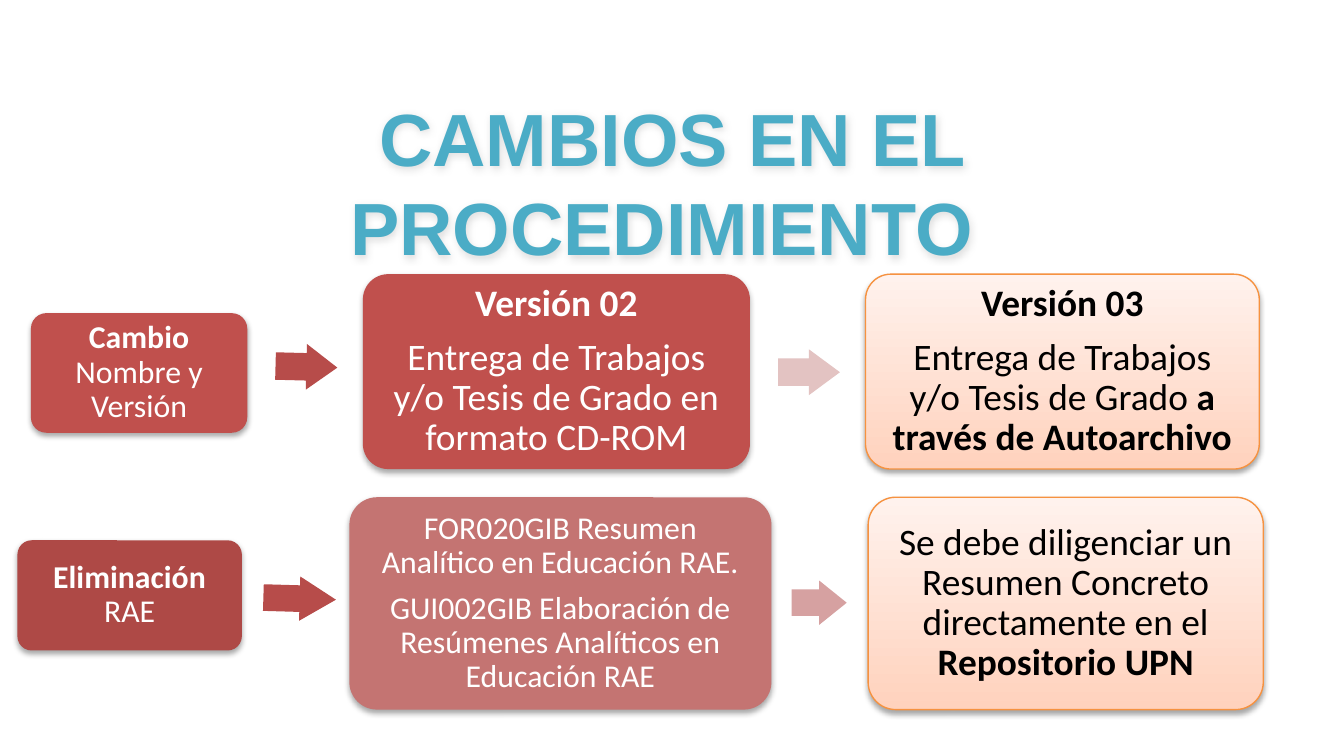
import pptx
import pptx.util
import pptx.dml.color
import pptx.enum.dml
import pptx.enum.shapes
import pptx.enum.text
import pptx.oxml
import pptx.oxml.ns

Inches = pptx.util.Inches
WHITE, BLACK, RED, PEACH = "FFFFFF", "000000", "C0504D", "FFD2BD"

VERSION_ROW = {
    "box": (0.23, 2.04, 9.14, 1.45),
    "cards": [
        ((0, 0.29, 1.61, 0.89), RED, 17,
         [[("Cambio", True), (" Nombre y Versión", False)]]),
        ((2.47, 0, 2.88, 1.45), RED, 20,
         [[("Versión 02", True)],
          [("Entrega de Trabajos y/o Tesis de Grado en formato CD-ROM", False)]]),
        ((6.21, 0, 2.93, 1.45), PEACH, 20,
         [[("Versión 03", True)],
          [("Entrega de Trabajos y/o Tesis de Grado ", False),
           ("a través de Autoarchivo", True)]]),
    ],
    "arrows": [((1.82, 0.52, 0.46, 0.34), "B74C4A", 1.5),
               ((5.56, 0.56, 0.46, 0.34), "E3C3C2", 0)],
}
REMOVAL_ROW = {
    "box": (0.13, 3.7, 9.28, 1.58),
    "cards": [
        ((0, 0.32, 1.67, 0.82), "AE4946", 17,
         [[("Eliminación", True), (" RAE", False)]]),
        ((2.47, 0, 3.14, 1.58), "C47472", 17,
         [[("FOR020GIB Resumen Analítico en Educación RAE.", False)],
          [("GUI002GIB Elaboración de Resúmenes Analíticos en Educación RAE", False)]]),
        ((6.33, 0, 2.94, 1.58), PEACH, 20,
         [[("Se debe diligenciar un Resumen Concreto directamente en el ", False),
           ("Repositorio UPN", True)]]),
    ],
    "arrows": [((1.83, 0.59, 0.54, 0.33), "B74C4A", 1.7),
               ((5.76, 0.62, 0.41, 0.33), "D6A1A1", 0)],
}


def color(value):
    """Return the RGB colour for a hex string."""
    return pptx.dml.color.RGBColor.from_string(value)


def add_shadow(shape, opacity, blur, distance):
    """Give the shape a soft black shadow falling straight down."""
    shape.shadow.inherit = False
    effects = shape.element.spPr.find(pptx.oxml.ns.qn("a:effectLst"))
    effects.append(pptx.oxml.parse_xml(
        f'<a:outerShdw {pptx.oxml.ns.nsdecls("a")} blurRad="{pptx.util.Pt(blur)}" '
        f'dist="{pptx.util.Pt(distance)}" dir="5400000" rotWithShape="0">'
        f'<a:srgbClr val="000000"><a:alpha val="{opacity * 1000}"/></a:srgbClr>'
        '</a:outerShdw>'))


def style_run(run, size, face, ink, bold):
    """Set the font of one run."""
    run.font.size = pptx.util.Pt(size)
    run.font.name = face
    run.font.color.rgb = color(ink)
    run.font.bold = bold


def fill_peach(card):
    """Fill the card with the peach gradient and outline it in orange."""
    card.fill.gradient()
    card.fill.gradient_angle = 90
    for stop, (place, shade) in zip(card.fill.gradient_stops, ((0, PEACH), (1, "FFF2ED"))):
        stop.position = place
        stop.color.rgb = color(shade)
    card.line.color.rgb = color("F69240")
    card.line.width = pptx.util.Pt(0.75)


def add_card(slide, box, fill, size, paragraphs):
    """Draw one rounded card with centred text."""
    card = slide.shapes.add_shape(
        pptx.enum.shapes.MSO_SHAPE.ROUNDED_RECTANGLE, *map(Inches, box))
    card.adjustments[0] = 0.13
    if fill == PEACH:
        fill_peach(card)
    else:
        card.fill.solid()
        card.fill.fore_color.rgb = color(fill)
        card.line.fill.background()
    add_shadow(card, 35, 3.1, 1.8)
    frame = card.text_frame
    frame.word_wrap = True
    frame.vertical_anchor = pptx.enum.text.MSO_ANCHOR.MIDDLE
    inset = Inches(0.08 if size < 20 else 0.1)
    frame.margin_left = frame.margin_right = inset
    frame.margin_top = frame.margin_bottom = inset
    for index, runs in enumerate(paragraphs):
        paragraph = frame.add_paragraph() if index else frame.paragraphs[0]
        paragraph.alignment = pptx.enum.text.PP_ALIGN.CENTER
        paragraph.line_spacing = 0.9
        if index < len(paragraphs) - 1:
            paragraph.space_after = pptx.util.Pt(round(size * 0.35))
        for words, bold in runs:
            run = paragraph.add_run()
            run.text = words
            style_run(run, size, "Calibri", BLACK if fill == PEACH else WHITE, bold)


def add_arrow(slide, box, fill, rotation):
    """Draw one block arrow whose head takes half its length."""
    arrow = slide.shapes.add_shape(
        pptx.enum.shapes.MSO_SHAPE.RIGHT_ARROW, *map(Inches, box))
    arrow.adjustments[0] = 0.6
    arrow.adjustments[1] = box[2] / 2 / box[3]
    arrow.rotation = rotation
    arrow.shadow.inherit = False
    arrow.fill.solid()
    arrow.fill.fore_color.rgb = color(fill)
    arrow.line.fill.background()


def add_change_row(slide, box, cards, arrows):
    """Place the cards and arrows of one change relative to the row box."""
    def place(part):
        return box[0] + part[0], box[1] + part[1], part[2], part[3]

    for part, fill, size, paragraphs in cards:
        add_card(slide, place(part), fill, size, paragraphs)
    for part, fill, rotation in arrows:
        add_arrow(slide, place(part), fill, rotation)


def add_title(slide, box, words):
    """Write the slide title centred in its box."""
    title = slide.shapes.add_textbox(*map(Inches, box))
    add_shadow(title, 12, 4, 1)
    frame = title.text_frame
    frame.word_wrap = True
    frame.vertical_anchor = pptx.enum.text.MSO_ANCHOR.MIDDLE
    frame.text = words
    paragraph = frame.paragraphs[0]
    paragraph.alignment = pptx.enum.text.PP_ALIGN.CENTER
    style_run(paragraph.runs[0], 39.6, "Arial", "4BACC6", True)


def main():
    """Build the slide and save it."""
    deck = pptx.Presentation()
    deck.slide_width = Inches(10)
    deck.slide_height = deck.slide_width * 9 // 16
    slide = deck.slides.add_slide(deck.slide_layouts[6])
    add_title(slide, (0.5, 0.88, 9, 0.94), "CAMBIOS EN EL PROCEDIMIENTO ")
    for row in (VERSION_ROW, REMOVAL_ROW):
        add_change_row(slide, **row)
    deck.save("out.pptx")


if __name__ == "__main__":
    main()
